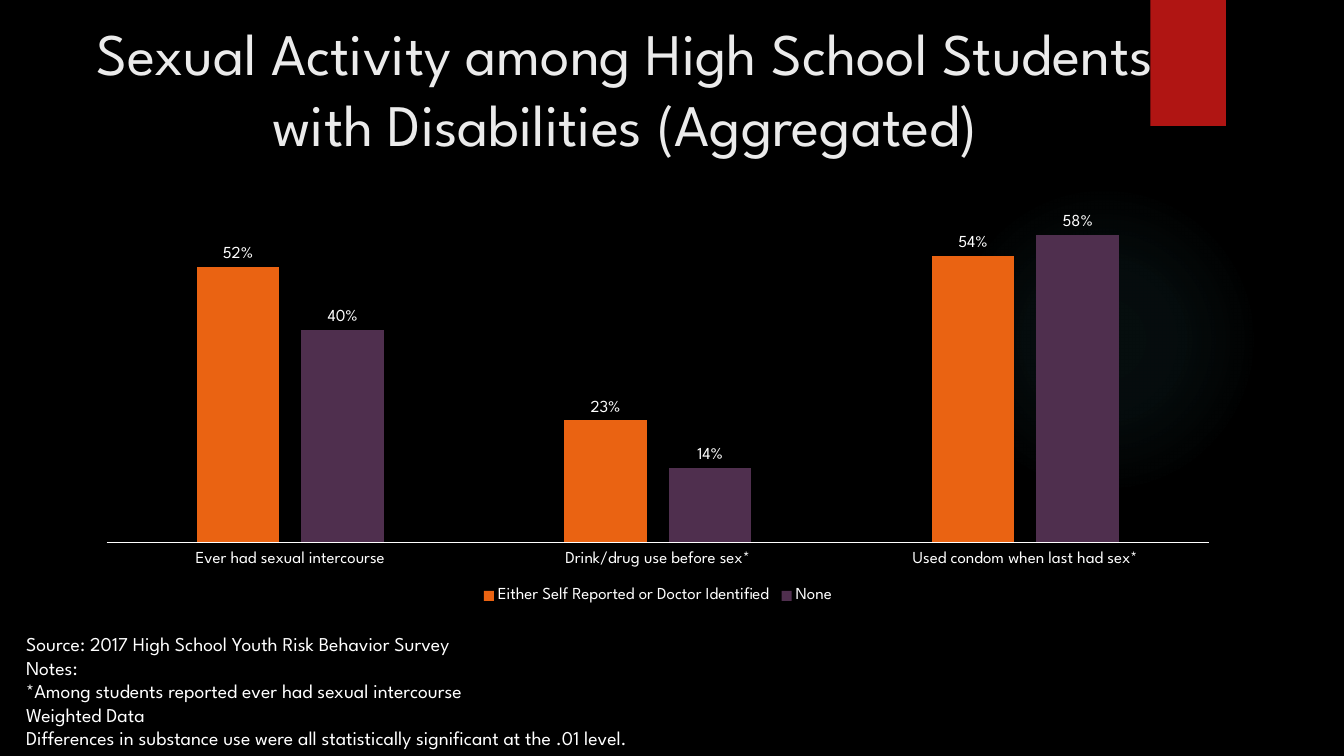
from lxml import etree
from pptx import Presentation
from pptx.chart.data import CategoryChartData
from pptx.dml.color import RGBColor
from pptx.enum.chart import XL_CHART_TYPE, XL_LABEL_POSITION, XL_LEGEND_POSITION, XL_TICK_LABEL_POSITION, XL_TICK_MARK
from pptx.enum.shapes import MSO_SHAPE
from pptx.enum.text import MSO_ANCHOR, MSO_AUTO_SIZE, PP_ALIGN
from pptx.oxml.ns import qn
from pptx.util import Inches, Pt

COLUMN = XL_CHART_TYPE.COLUMN_CLUSTERED
OUTSIDE_END = XL_LABEL_POSITION.OUTSIDE_END
LEGEND_BOTTOM = XL_LEGEND_POSITION.BOTTOM
LABELS_LOW = XL_TICK_LABEL_POSITION.LOW
NO_TICK = XL_TICK_MARK.NONE
MIDDLE = MSO_ANCHOR.MIDDLE
CENTER = PP_ALIGN.CENTER
NO_AUTOFIT = MSO_AUTO_SIZE.NONE

FONT = "League Spartan"
COLORS = {
    "background": "000000",
    "glow": "50B9C1",
    "tab": "B01513",
    "title": "EBEBEB",
    "text": "FFFFFF",
    "identified": "EA6312",
    "none": "4F2F4E",
}
GLOW_STOPS = [(0, 7), (36, 6), (69, 0)]
CATEGORIES = [
    "Ever had sexual intercourse",
    "Drink/drug use before sex*",
    "Used condom when last had sex*",
]
SERIES = [
    ("Either Self Reported or Doctor Identified", (0.52, 0.23, 0.54), "identified"),
    ("None", (0.40, 0.14, 0.58), "none"),
]
NOTES = [
    "Source: 2017 High School Youth Risk Behavior Survey",
    "Notes:",
    "*Among students reported ever had sexual intercourse",
    "Weighted Data",
    "Differences in substance use were all statistically significant at the .01 level.",
]


def rgb(name):
    return RGBColor.from_string(COLORS[name])


def style_font(font, size, color="text"):
    font.name = FONT
    font.size = Pt(size)
    font.bold = False
    font.color.rgb = rgb(color)


def add_plain_shape(slide, kind, box, color):
    sp = slide.shapes.add_shape(kind, *map(Inches, box))
    sp.shadow.inherit = False
    sp.fill.solid()
    sp.fill.fore_color.rgb = rgb(color)
    sp.line.fill.background()
    return sp


def add_glow(slide, box):
    sp = add_plain_shape(slide, MSO_SHAPE.OVAL, box, "glow")
    solid = sp.fill._xPr.find(qn("a:solidFill"))
    grad = etree.Element(qn("a:gradFill"), rotWithShape="1")
    stops = etree.SubElement(grad, qn("a:gsLst"))
    for position, alpha in GLOW_STOPS:
        stop = etree.SubElement(stops, qn("a:gs"), pos=str(position * 1000))
        color = etree.SubElement(stop, qn("a:srgbClr"), val=COLORS["glow"])
        etree.SubElement(color, qn("a:alpha"), val=str(alpha * 1000))
    circle = etree.SubElement(grad, qn("a:path"), path="circle")
    etree.SubElement(circle, qn("a:fillToRect"), l="50000", t="50000", r="50000", b="50000")
    solid.getparent().replace(solid, grad)


def place_title(slide, box):
    title = slide.shapes.title
    title.left, title.top, title.width, title.height = map(Inches, box)
    tf = title.text_frame
    tf.text = "Sexual Activity among High School Students with Disabilities (Aggregated)"
    tf.word_wrap = True
    tf.auto_size = NO_AUTOFIT
    tf.vertical_anchor = MIDDLE
    p = tf.paragraphs[0]
    p.alignment = CENTER
    style_font(p.runs[0].font, 42, "title")
    slide.shapes._spTree.append(title._element)


def add_activity_chart(slide, box):
    data = CategoryChartData(number_format="0%")
    data.categories = CATEGORIES
    for name, values, _ in SERIES:
        data.add_series(name, values)
    chart = slide.shapes.add_chart(COLUMN, *map(Inches, box), data).chart
    style_font(chart.font, 10)
    chart.has_title = False

    chart.has_legend = True
    chart.legend.position = LEGEND_BOTTOM
    chart.legend.include_in_layout = False
    style_font(chart.legend.font, 12)

    axis = chart.category_axis
    axis.major_tick_mark = NO_TICK
    axis.tick_label_position = LABELS_LOW
    style_font(axis.tick_labels.font, 12)
    axis.format.line.color.rgb = rgb("text")
    axis.format.line.width = Pt(0.75)

    values_axis = chart.value_axis
    values_axis.visible = False
    values_axis.has_major_gridlines = False
    values_axis.minimum_scale = 0
    values_axis.maximum_scale = 0.7

    plot = chart.plots[0]
    plot.gap_width = 219
    plot.overlap = -27
    plot.vary_by_categories = False
    for series, (_, _, color) in zip(plot.series, SERIES):
        series.format.fill.solid()
        series.format.fill.fore_color.rgb = rgb(color)
        labels = series.data_labels
        labels.show_value = True
        labels.position = OUTSIDE_END
        labels.number_format = "0%"
        labels.number_format_is_linked = False
        style_font(labels.font, 12)


def add_notes_block(slide, box):
    tf = slide.shapes.add_textbox(*map(Inches, box)).text_frame
    tf.word_wrap = True
    tf.text = "\n".join(NOTES)
    for p in tf.paragraphs:
        style_font(p.runs[0].font, 14)


def main():
    prs = Presentation()
    prs.slide_width = Inches(13.33)
    prs.slide_height = Inches(7.5)
    slide = prs.slides.add_slide(prs.slide_layouts[5])
    slide.background.fill.solid()
    slide.background.fill.fore_color.rgb = rgb("background")
    add_glow(slide, (9.41, 1.83, 3.08, 3.08))
    add_plain_shape(slide, MSO_SHAPE.RECTANGLE, (11.41, 0, 0.75, 1.25), "tab")
    place_title(slide, (0.62, 0.1, 11.16, 1.53))
    add_activity_chart(slide, (0.83, 1.61, 11.39, 4.42))
    add_notes_block(slide, (0.16, 6.22, 13.17, 1.28))
    prs.save("out.pptx")


if __name__ == "__main__":
    main()
